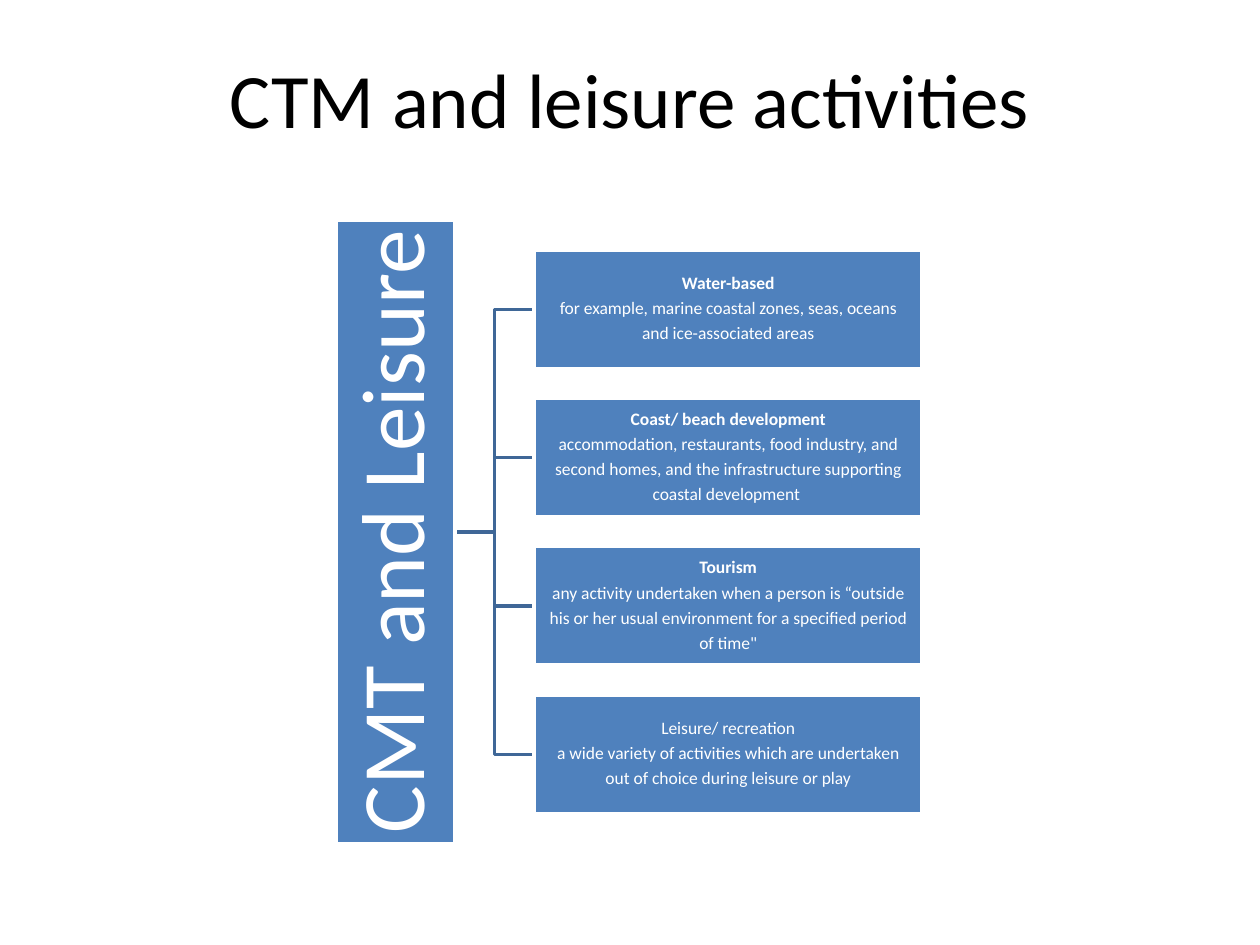
from pptx import Presentation
from pptx.dml.color import RGBColor
from pptx.enum.shapes import MSO_SHAPE as Shape
from pptx.enum.text import MSO_ANCHOR as Anchor, PP_ALIGN as Align
from pptx.util import Cm, Pt

TITLE = "CTM and leisure activities"
ROOT = "CMT and Leisure"
BRANCHES = [
    ("Water-based", True, [
        "for example, marine coastal zones, seas, oceans",
        "and ice-associated areas"]),
    ("Coast/ beach development", True, [
        "accommodation, restaurants, food industry, and",
        "second homes, and the infrastructure supporting",
        "coastal development "]),
    ("Tourism", True, [
        "any activity undertaken when a person is “outside",
        "his or her usual environment for a specified period",
        "of time\""]),
    ("Leisure/ recreation", False, [
        "a wide variety of activities which are undertaken",
        "out of choice during leisure or play"]),
]

FONT = "Calibri"
BLUE, DARK_BLUE, WHITE, BLACK = "4F81BD", "3F6797", "FFFFFF", "000000"

CENTRE_Y = 10.72
ROOT_LENGTH, THICKNESS = 12.58, 2.39
ROOT_X = 7.98
BRANCH_LEFT, BRANCH_WIDTH, PITCH = 10.77, 7.82, 2.99
ROOT_RIGHT = ROOT_X + THICKNESS / 2
SPINE_X = (ROOT_RIGHT + BRANCH_LEFT) / 2


def paint(colour_format, colour):
    colour_format.rgb = RGBColor.from_string(colour)


def style_font(font, size, colour, bold=False):
    font.name, font.size, font.bold = FONT, Pt(size), bold
    paint(font.color, colour)


def add_box(slide, left, top, width, height, lines, size, inset):
    box = slide.shapes.add_shape(
        Shape.RECTANGLE, Cm(left), Cm(top), Cm(width), Cm(height))
    box.shadow.inherit = False
    box.fill.solid()
    paint(box.fill.fore_color, BLUE)
    paint(box.line.color, WHITE)
    box.line.width = Pt(2)
    frame = box.text_frame
    frame.word_wrap = True
    frame.vertical_anchor = Anchor.MIDDLE
    frame.margin_left = frame.margin_right = Cm(inset)
    frame.margin_top = frame.margin_bottom = Cm(inset)
    for i, (line, bold) in enumerate(lines):
        paragraph = frame.add_paragraph() if i else frame.paragraphs[0]
        paragraph.text = line
        paragraph.alignment = Align.CENTER
        paragraph.line_spacing = 0.9
        paragraph.space_after = Pt(0.35 * size)
        style_font(paragraph.font, size, WHITE, bold)
    return box


def add_link(slide, branch_y):
    builder = slide.shapes.build_freeform(Cm(ROOT_RIGHT), Cm(CENTRE_Y))
    builder.add_line_segments(
        [(Cm(x), Cm(y)) for x, y in (
            (SPINE_X, CENTRE_Y), (SPINE_X, branch_y), (BRANCH_LEFT, branch_y))],
        close=False)
    link = builder.convert_to_shape()
    link.shadow.inherit = False
    link.fill.background()
    paint(link.line.color, DARK_BLUE)
    link.line.width = Pt(2)


def main():
    prs = Presentation()
    prs.slide_width, prs.slide_height = Cm(25.4), Cm(19.05)
    slide = prs.slides.add_slide(prs.slide_layouts[5])

    title = slide.shapes.title
    title.left, title.top = Cm(1.27), Cm(0.76)
    title.width, title.height = Cm(22.86), Cm(2.41)
    title.text_frame.text = TITLE
    title.text_frame.vertical_anchor = Anchor.MIDDLE
    heading = title.text_frame.paragraphs[0]
    heading.alignment = Align.CENTER
    style_font(heading.font, 44, BLACK)

    middle = (len(BRANCHES) - 1) / 2
    centres = [CENTRE_Y + (i - middle) * PITCH for i in range(len(BRANCHES))]
    for branch_y in reversed(centres):
        add_link(slide, branch_y)

    root = add_box(slide, ROOT_X - ROOT_LENGTH / 2, CENTRE_Y - THICKNESS / 2,
                   ROOT_LENGTH, THICKNESS, [(ROOT, False)], 51, 0.1)
    root.rotation = 270

    for branch_y, (name, bold, details) in zip(centres, BRANCHES):
        lines = [(name, bold)] + [(detail, False) for detail in details]
        add_box(slide, BRANCH_LEFT, branch_y - THICKNESS / 2,
                BRANCH_WIDTH, THICKNESS, lines, 10, 0.03)

    prs.save("out.pptx")


if __name__ == "__main__":
    main()
